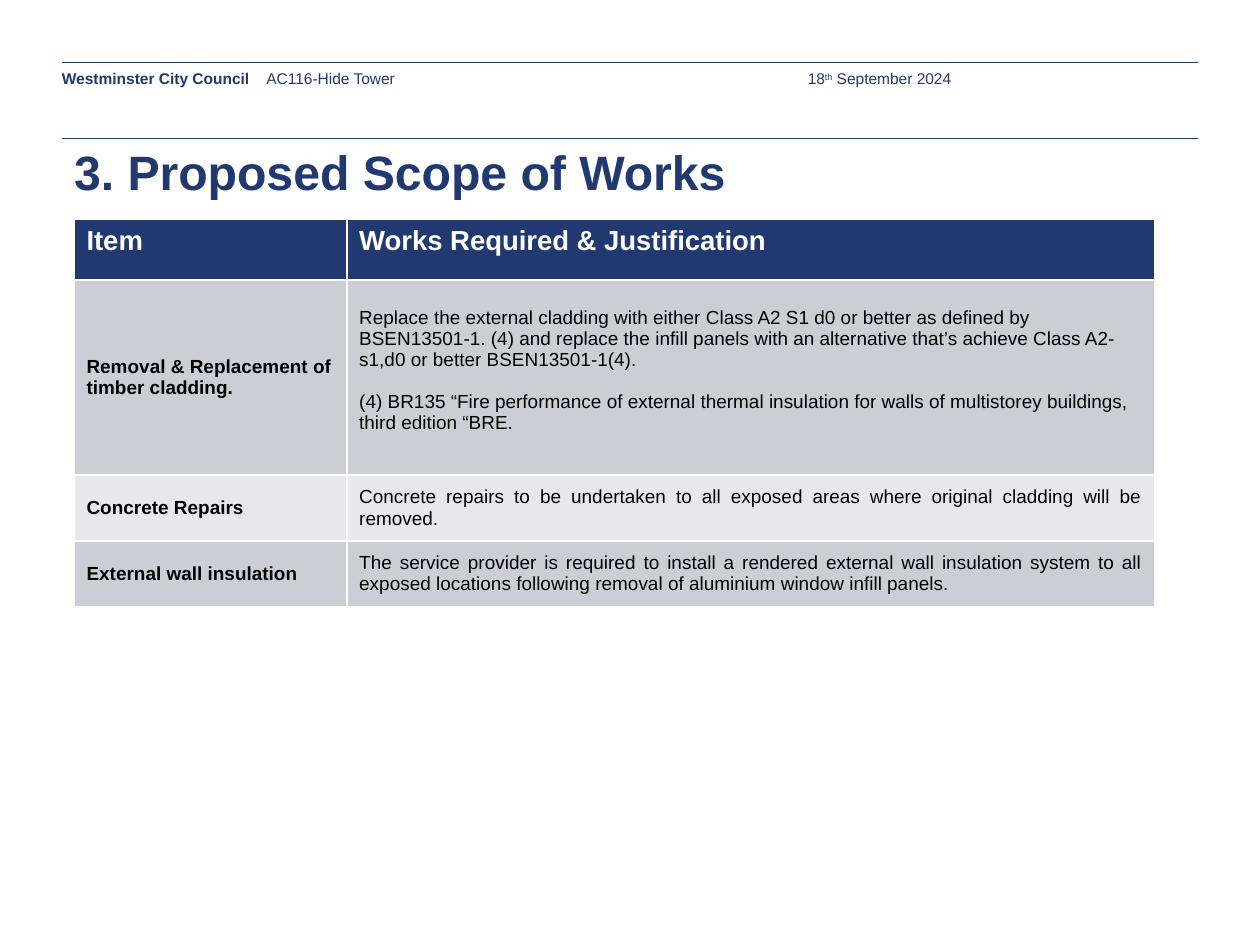
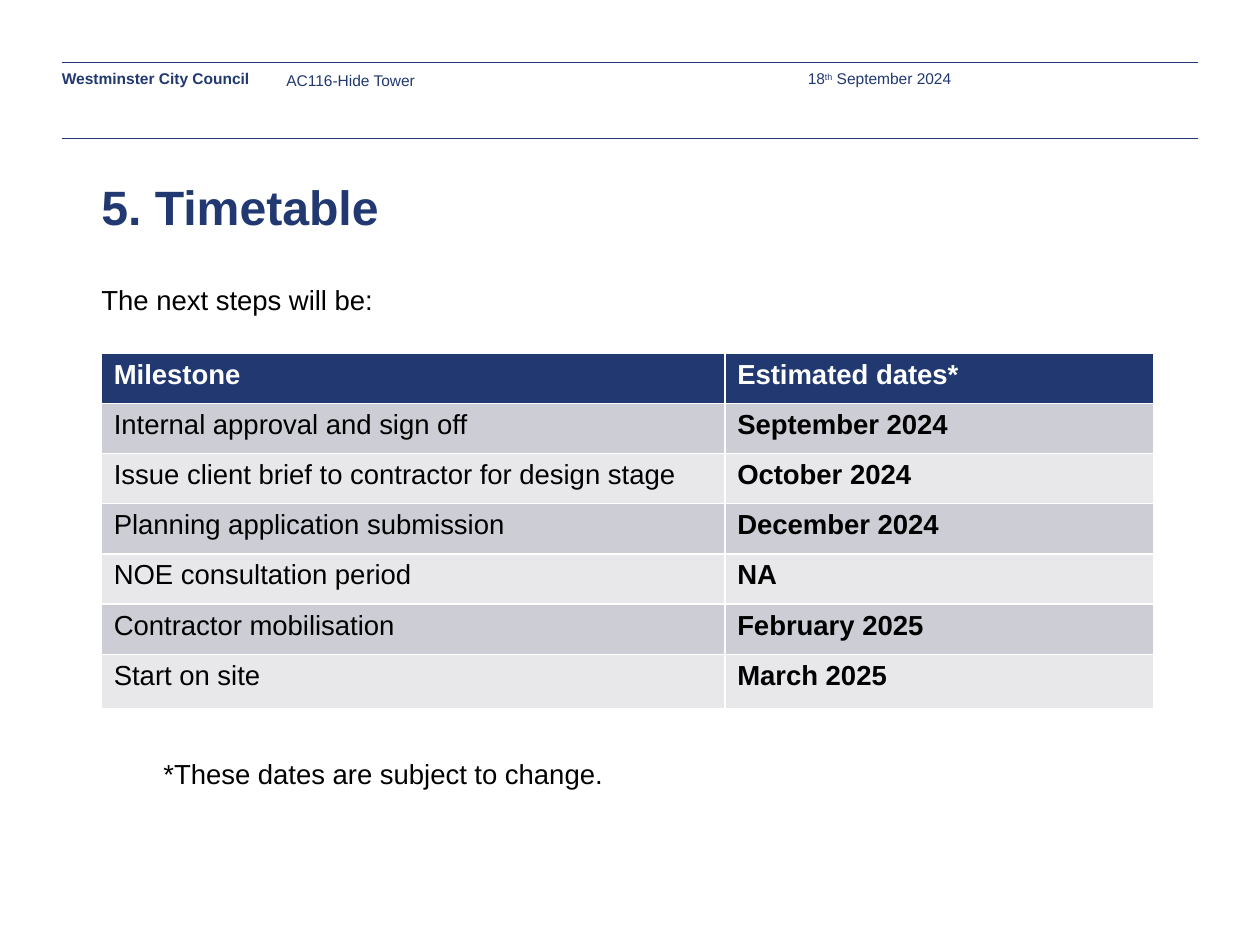
from dataclasses import dataclass

from lxml.etree import SubElement
from pptx import Presentation
from pptx.dml.color import RGBColor
from pptx.enum.shapes import MSO_CONNECTOR
from pptx.enum.text import MSO_ANCHOR, PP_ALIGN
from pptx.oxml.ns import qn
from pptx.util import Cm, Pt


@dataclass(frozen=True)
class Theme:
    face: str = "Arial"
    navy: RGBColor = RGBColor(0x21, 0x39, 0x70)
    black: RGBColor = RGBColor(0, 0, 0)
    white: RGBColor = RGBColor(255, 255, 255)
    bands: tuple = (RGBColor(0xCD, 0xCE, 0xD5), RGBColor(0xE8, 0xE8, 0xEB))
    rule: Pt = Pt(0.25)
    title: Pt = Pt(28)
    body: Pt = Pt(16)
    detail: Pt = Pt(11)
    running: Pt = Pt(9)


THEME = Theme()
LEFT, RIGHT = Cm(1.27), Cm(24.56)
RULE_TOPS = Cm(1.27), Cm(2.84)
RUNNING_TOP = Cm(1.42)


def set_font(para, size, color, bold=False):
    font = para.font
    font.name, font.size, font.bold = THEME.face, size, bold
    font.color.rgb = color


def add_text(page, left, top, width, height, text, size, color, bold=False):
    box = page.shapes.add_textbox(left, top, width, height)
    frame = box.text_frame
    frame.word_wrap = True
    frame.margin_left = frame.margin_right = frame.margin_top = frame.margin_bottom = 0
    para = frame.paragraphs[0]
    para.text = text
    set_font(para, size, color, bold)
    return para


def add_rule(page, top):
    rule = page.shapes.add_connector(MSO_CONNECTOR.STRAIGHT, LEFT, top, RIGHT, top)
    rule.line.color.rgb = THEME.navy
    rule.line.width = THEME.rule
    SubElement(rule._element.spPr, qn("a:effectLst"))


def add_running_head(page, project_left, project_top):
    for top in RULE_TOPS:
        add_rule(page, top)
    labels = (
        (LEFT, RUNNING_TOP, Cm(4), "Westminster City Council", True),
        (project_left, project_top, Cm(9.07), "AC116-Hide Tower", False),
    )
    for left, top, width, text, bold in labels:
        add_text(page, left, top, width, Cm(0.38), text, THEME.running, THEME.navy, bold)
    date = add_text(page, Cm(16.56), RUNNING_TOP, Cm(5.82), Cm(0.38), "18",
                    THEME.running, THEME.navy)
    ordinal = date.add_run()
    ordinal.text = "th"
    ordinal._r.get_or_add_rPr().set("baseline", "30000")
    date.add_run().text = " September 2024"


def add_title(page, left, top, text):
    add_text(page, left, top, RIGHT - left, Cm(1.2), text, THEME.title, THEME.navy, True)


def add_grid(page, left, top, widths, heights, rows, size, bold_column):
    """Place a table with a navy heading row and alternating grey bands."""
    grid = page.shapes.add_table(len(rows), len(widths), left, top,
                                 sum(widths), sum(heights)).table
    for column, width in zip(grid.columns, widths):
        column.width = width
    for row_index, (texts, height) in enumerate(zip(rows, heights)):
        grid.rows[row_index].height = height
        heading = row_index == 0
        for column_index, text in enumerate(texts):
            cell = grid.cell(row_index, column_index)
            cell.text = text
            cell.fill.solid()
            cell.fill.fore_color.rgb = THEME.navy if heading else THEME.bands[(row_index - 1) % 2]
            for para in cell.text_frame.paragraphs:
                set_font(para, THEME.body if heading else size,
                         THEME.white if heading else THEME.black,
                         heading or column_index == bold_column)
    return grid


def build_scope(page):
    add_running_head(page, Cm(5.46), RUNNING_TOP)
    left = Cm(1.52)
    add_title(page, left, Cm(2.92), "3. Proposed Scope of Works")
    rows = (
        ("Item", "Works Required & Justification"),
        ("Removal & Replacement of timber cladding.",
         "Replace the external cladding with either Class A2 S1 d0 or better as defined by "
         "BSEN13501-1. (4) and replace the infill panels with an alternative that’s achieve "
         "Class A2-s1,d0 or better BSEN13501-1(4).\n"
         "(4) BR135 “Fire performance of external thermal insulation for walls of multistorey "
         "buildings, third edition “BRE."),
        ("Concrete Repairs",
         "Concrete repairs to be undertaken to all exposed areas where original cladding "
         "will be removed."),
        ("External wall insulation",
         "The service provider is required to install a rendered external wall insulation "
         "system to all exposed locations following removal of aluminium window infill panels."),
    )
    heights = (Cm(1.24), Cm(4), Cm(1.35), Cm(1.35))
    grid = add_grid(page, left, Cm(4.5), (Cm(5.59), Cm(16.56)), heights, rows,
                    THEME.detail, bold_column=0)
    for row_index in range(1, len(rows)):
        for column_index in range(2):
            grid.cell(row_index, column_index).vertical_anchor = MSO_ANCHOR.MIDDLE
    cladding = grid.cell(1, 1)
    cladding.margin_bottom = Cm(0.41)
    cladding.text_frame.paragraphs[1].space_before = Pt(12)
    for row_index in (2, 3):
        grid.cell(row_index, 1).text_frame.paragraphs[0].alignment = PP_ALIGN.JUSTIFY


def build_timetable(page):
    add_running_head(page, Cm(5.87), RUNNING_TOP + Cm(0.04))
    left = Cm(2.08)
    add_title(page, left, Cm(3.64), "5. Timetable")
    notes = (
        (left, Cm(5.8), "The next steps will be:"),
        (left + Cm(1.27), Cm(15.52), "*These dates are subject to change."),
    )
    for note_left, top, text in notes:
        add_text(page, note_left, top, Cm(18), Cm(0.7), text, THEME.body, THEME.black)
    rows = (
        ("Milestone", "Estimated dates*"),
        ("Internal approval and sign off", "September 2024"),
        ("Issue client brief to contractor for design stage", "October 2024"),
        ("Planning application submission", "December 2024"),
        ("NOE consultation period", "NA"),
        ("Contractor mobilisation", "February 2025"),
        ("Start on site", "March 2025"),
    )
    heights = [Cm(1.03)] * (len(rows) - 1) + [Cm(1.12)]
    add_grid(page, left, Cm(7.24), (Cm(12.78), Cm(8.79)), heights, rows,
             THEME.body, bold_column=1)


def main():
    deck = Presentation()
    deck.slide_width, deck.slide_height = Cm(25.83), Cm(19.46)
    blank = deck.slide_layouts[6]
    for build in (build_scope, build_timetable):
        build(deck.slides.add_slide(blank))
    deck.save("out.pptx")


if __name__ == "__main__":
    main()
